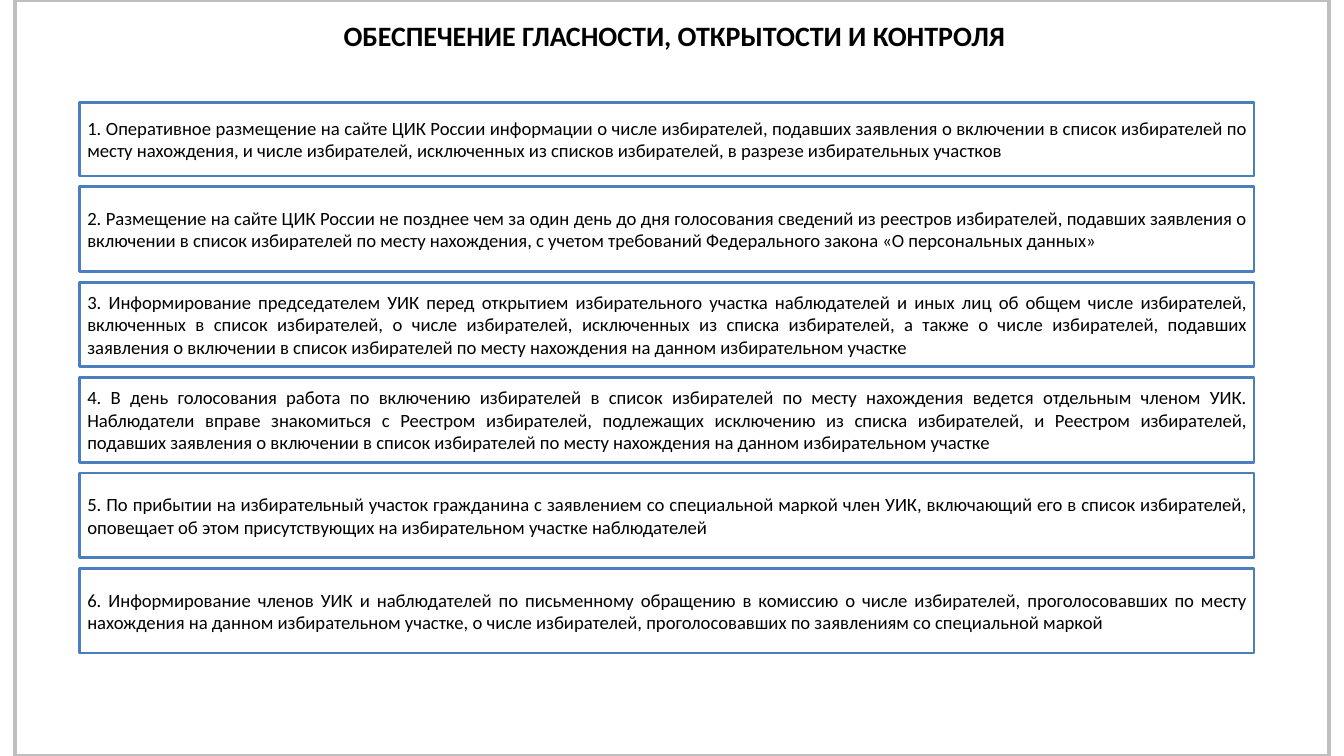
from pptx import Presentation
from pptx.dml.color import RGBColor
from pptx.enum.shapes import MSO_SHAPE as Shape
from pptx.enum.text import MSO_ANCHOR as Anchor, PP_ALIGN as Align
from pptx.util import Inches, Pt

COLORS = {"text": "000000", "frame": "BFBFBF", "measure": "4B7EBC"}
FONT = "Calibri"
SLIDE_WIDTH = 10
SLIDE_HEIGHT = SLIDE_WIDTH * 9 / 16
TITLE = "ОБЕСПЕЧЕНИЕ ГЛАСНОСТИ, ОТКРЫТОСТИ И КОНТРОЛЯ"
MEASURES = [
    "Оперативное размещение на сайте ЦИК России информации о числе избирателей, "
    "подавших заявления о включении в список избирателей по месту нахождения, "
    "и числе избирателей, исключенных из списков избирателей, в разрезе избирательных участков",
    "Размещение на сайте ЦИК России не позднее чем за один день до дня голосования "
    "сведений из реестров избирателей, подавших заявления о включении в список избирателей "
    "по месту нахождения, с учетом требований Федерального закона «О персональных данных»",
    "Информирование председателем УИК перед открытием избирательного участка наблюдателей "
    "и иных лиц об общем числе избирателей, включенных в список избирателей, о числе "
    "избирателей, исключенных из списка избирателей, а также о числе избирателей, подавших "
    "заявления о включении в список избирателей по месту нахождения на данном "
    "избирательном участке",
    "В день голосования работа по включению избирателей в список избирателей по месту "
    "нахождения ведется отдельным членом УИК. Наблюдатели вправе знакомиться с Реестром "
    "избирателей, подлежащих исключению из списка избирателей, и Реестром избирателей, "
    "подавших заявления о включении в список избирателей по месту нахождения на данном "
    "избирательном участке",
    "По прибытии на избирательный участок гражданина с заявлением со специальной маркой "
    "член УИК, включающий его в список избирателей, оповещает об этом присутствующих "
    "на избирательном участке наблюдателей",
    "Информирование членов УИК и наблюдателей по письменному обращению в комиссию о числе "
    "избирателей, проголосовавших по месту нахождения на данном избирательном участке, "
    "о числе избирателей, проголосовавших по заявлениям со специальной маркой",
]
HEIGHTS = [0.55] + [0.63] * 5
GAP = 0.08


def write_text(shape, text, size, align, bold=False, margins=(0.1, 0.05)):
    """Write one formatted paragraph, centred vertically in the shape."""
    frame = shape.text_frame
    frame.word_wrap = True
    frame.vertical_anchor = Anchor.MIDDLE
    frame.margin_left = frame.margin_right = Inches(margins[0])
    frame.margin_top = frame.margin_bottom = Inches(margins[1])
    paragraph = frame.paragraphs[0]
    paragraph.alignment = align
    run = paragraph.add_run()
    run.text = text
    run.font.name = FONT
    run.font.size = Pt(size)
    run.font.bold = bold
    run.font.color.rgb = RGBColor.from_string(COLORS["text"])


def add_outline(slide, kind, left, top, width, height, color, weight):
    """Add an unfilled shape with a coloured outline."""
    outline = slide.shapes.add_shape(
        kind, Inches(left), Inches(top), Inches(width), Inches(height))
    outline.shadow.inherit = False
    outline.fill.background()
    outline.line.color.rgb = RGBColor.from_string(COLORS[color])
    outline.line.width = Pt(weight)
    return outline


def add_title(slide, left, top, width, height):
    """Add the centred slide heading."""
    heading = slide.shapes.add_textbox(
        Inches(left), Inches(top), Inches(width), Inches(height))
    write_text(heading, TITLE, size=15, align=Align.CENTER, bold=True)


def add_measures(slide, left, top, width):
    """Stack the numbered measures downwards with equal gaps."""
    for number, (measure, height) in enumerate(zip(MEASURES, HEIGHTS), 1):
        box = add_outline(slide, Shape.ROUND_2_SAME_RECTANGLE,
                          left, top, width, height, "measure", 1.5)
        box.adjustments[0] = box.adjustments[1] = 0
        write_text(box, f"{number}. {measure}", size=10,
                   align=Align.JUSTIFY, margins=(0.06, 0.03))
        top += height + GAP


def main():
    """Build and save the slide."""
    deck = Presentation()
    deck.slide_width, deck.slide_height = Inches(SLIDE_WIDTH), Inches(SLIDE_HEIGHT)
    slide = deck.slides.add_slide(deck.slide_layouts[6])
    add_title(slide, 0.02, 0.14, SLIDE_WIDTH, 0.24)
    add_outline(slide, Shape.RECTANGLE, 0.11, 0, 9.78, SLIDE_HEIGHT, "frame", 2)
    add_measures(slide, 0.59, 0.76, 8.74)
    deck.save("out.pptx")


if __name__ == "__main__":
    main()
